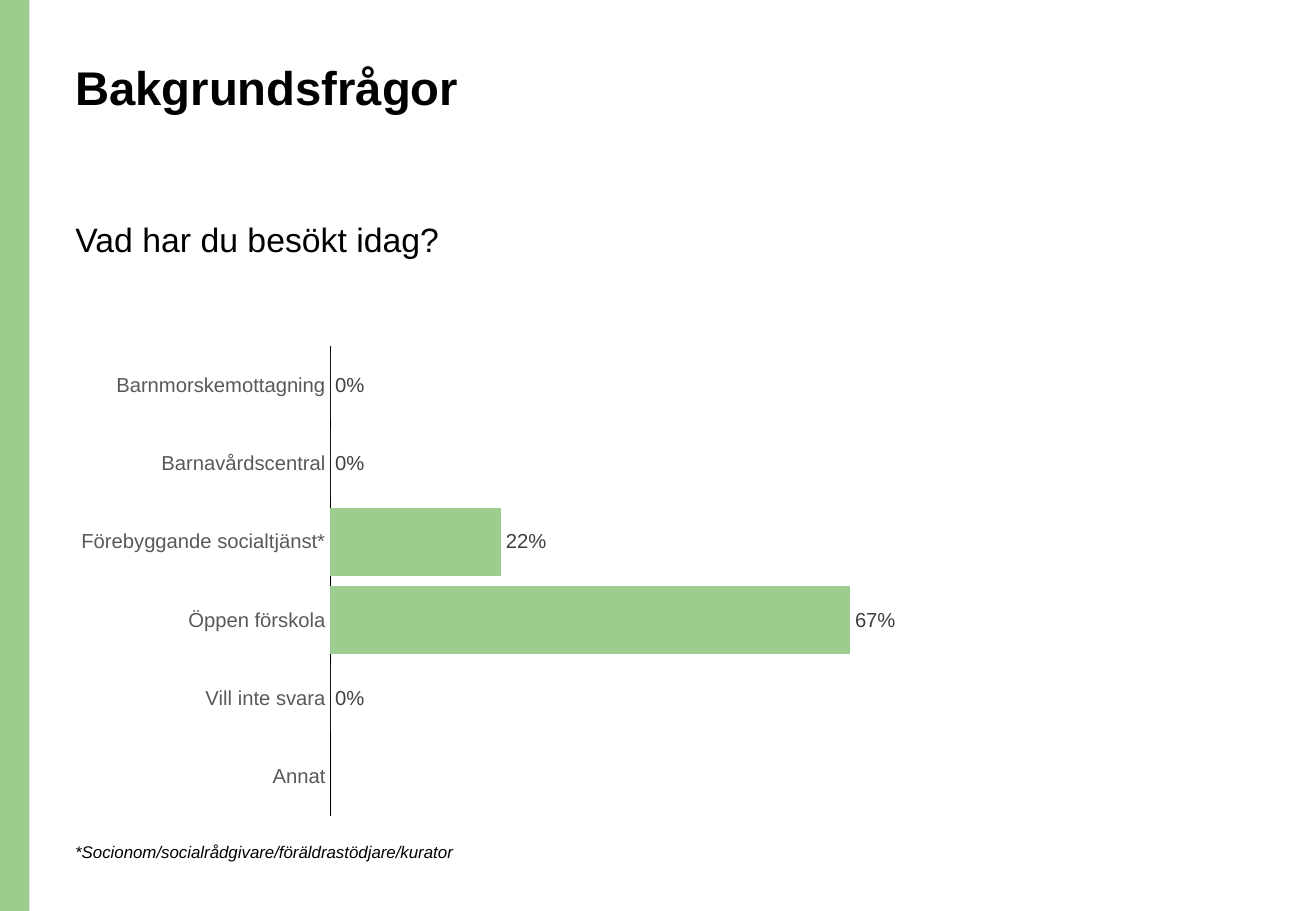
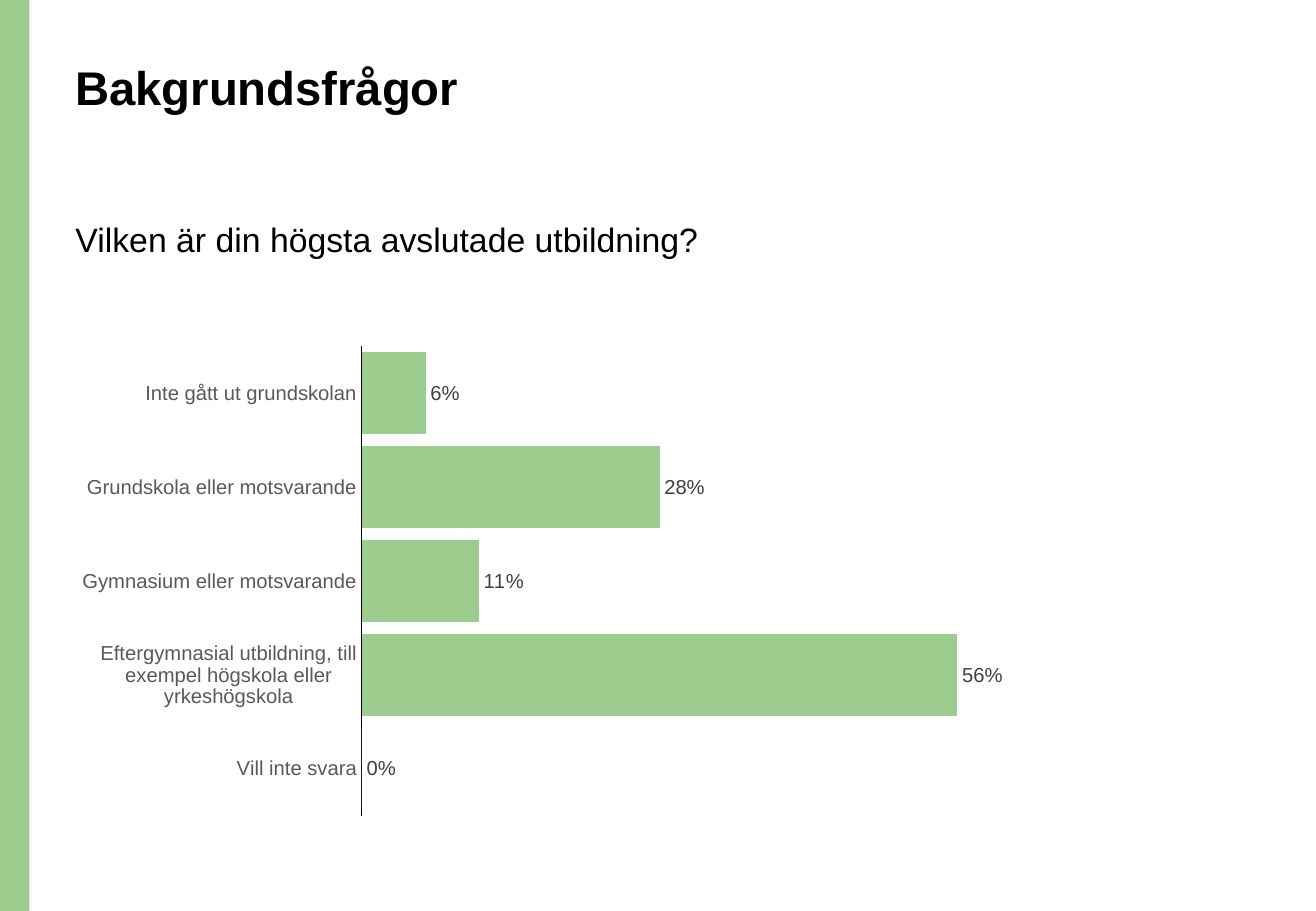
import dataclasses
import lxml.etree
import pptx
import pptx.chart.data
import pptx.dml.color
import pptx.enum.chart
import pptx.enum.shapes
import pptx.enum.text
import pptx.oxml.ns
import pptx.util

Pt = pptx.util.Pt
RGB = pptx.dml.color.RGBColor.from_string
KIND = pptx.enum.chart


@dataclasses.dataclass(frozen=True)
class Theme:
    green: str = "9DCC8F"
    black: str = "000000"
    axis: str = "595959"
    label: str = "404040"
    face: str = "Arial"
    title: int = 28
    body: int = 20
    chart: int = 12
    base: int = 10
    left: float = 37.5


def apply(item, **vals):
    for name, val in vals.items():
        setattr(item, name, val)


class Deck:
    def __init__(self, theme, wide, high):
        self.theme = theme
        self.file = pptx.Presentation()
        apply(self.file, slide_width=Pt(wide), slide_height=Pt(high))
        self.high = high
        self.slide = None

    def start(self):
        self.slide = self.file.slides.add_slide(self.file.slide_layouts[1])
        self.band()

    def font(self, font, size, color, **more):
        apply(font, name=self.theme.face, size=Pt(size), **more)
        font.color.rgb = RGB(color)

    def band(self):
        bar = self.slide.shapes.add_shape(
            pptx.enum.shapes.MSO_SHAPE.RECTANGLE, 0, 0, Pt(17.5), Pt(self.high))
        bar.shadow.inherit = False
        bar.fill.solid()
        bar.fill.fore_color.rgb = RGB(self.theme.green)
        bar.line.fill.background()

    def text(self, box, words, size, space=1.0, **more):
        frame = box.text_frame
        apply(frame, text=words, word_wrap=True,
              auto_size=pptx.enum.text.MSO_AUTO_SIZE.NONE,
              vertical_anchor=pptx.enum.text.MSO_ANCHOR.TOP)
        para = frame.paragraphs[0]
        apply(para, alignment=pptx.enum.text.PP_ALIGN.LEFT,
              line_spacing=space, space_before=Pt(0))
        self.font(para.runs[0].font, size, self.theme.black, **more)
        return para

    def place(self, box, top, wide, high):
        apply(box, left=Pt(self.theme.left), top=Pt(top),
              width=Pt(wide), height=Pt(high))

    def title(self, words):
        box = self.slide.shapes.title
        self.place(box, 34.5, 672.5, 73.5)
        self.text(box, words, self.theme.title, 0.9, bold=True)

    def body(self, words, wide):
        box = self.slide.placeholders[1]
        self.place(box, 129, wide, 53)
        para = self.text(box, words, self.theme.body, 0.9, bold=False)
        props = para._p.get_or_add_pPr()
        for name in ("marL", "indent"):
            props.set(name, "0")
        lxml.etree.SubElement(props, pptx.oxml.ns.qn("a:buNone"))

    def note(self, words):
        box = self.slide.shapes.add_textbox(
            Pt(self.theme.left), Pt(495.5), Pt(390), Pt(19.5))
        self.text(box, words, self.theme.base, italic=True)

    def chart(self, rows, wide, top):
        look = self.theme
        data = pptx.chart.data.CategoryChartData(number_format="0%")
        data.categories = list(rows)
        data.add_series("Series 1", list(rows.values()))
        chart = self.slide.shapes.add_chart(
            KIND.XL_CHART_TYPE.BAR_CLUSTERED,
            Pt(look.left), Pt(199.5), Pt(wide), Pt(290), data).chart
        apply(chart, has_legend=False, has_title=False)
        self.font(chart.font, look.base, look.black)

        axis = chart.category_axis
        apply(axis, reverse_order=True, has_major_gridlines=False,
              major_tick_mark=KIND.XL_TICK_MARK.NONE,
              minor_tick_mark=KIND.XL_TICK_MARK.NONE)
        self.font(axis.tick_labels.font, look.chart, look.axis)
        axis.format.line.width = Pt(0.75)
        axis.format.line.color.rgb = RGB(look.black)
        apply(chart.value_axis, visible=False, has_major_gridlines=False,
              minimum_scale=0, maximum_scale=top)

        plot = chart.plots[0]
        apply(plot, gap_width=15, vary_by_categories=False,
              has_data_labels=True)
        fill = plot.series[0].format.fill
        fill.solid()
        fill.fore_color.rgb = RGB(look.green)
        tags = plot.data_labels
        apply(tags, show_value=True, number_format="0%",
              number_format_is_linked=False,
              position=KIND.XL_LABEL_POSITION.OUTSIDE_END)
        self.font(tags.font, look.chart, look.label)

    def page(self, ask, span, rows, wide, top, note=None):
        self.start()
        self.title("Bakgrundsfrågor")
        self.body(ask, span)
        self.chart(rows, wide, top)
        if note:
            self.note(note)


def main():
    deck = Deck(Theme(), 780, 540)
    visit = {
        "Barnmorskemottagning": 0,
        "Barnavårdscentral": 0,
        "Förebyggande socialtjänst*": 0.22,
        "Öppen förskola": 0.67,
        "Vill inte svara": 0,
        "Annat": None,
    }
    school = {
        "Inte gått ut grundskolan": 0.06,
        "Grundskola eller motsvarande": 0.28,
        "Gymnasium eller motsvarande": 0.11,
        "Eftergymnasial utbildning, till exempel högskola eller "
        "yrkeshögskola": 0.56,
        "Vill inte svara": 0,
    }
    deck.page("Vad har du besökt idag?", 468, visit, 537, 0.8,
              "*Socionom/socialrådgivare/föräldrastödjare/kurator")
    deck.page("Vilken är din högsta avslutade utbildning?", 434,
              school, 566.5, 0.6)
    deck.file.save("out.pptx")


if __name__ == "__main__":
    main()
